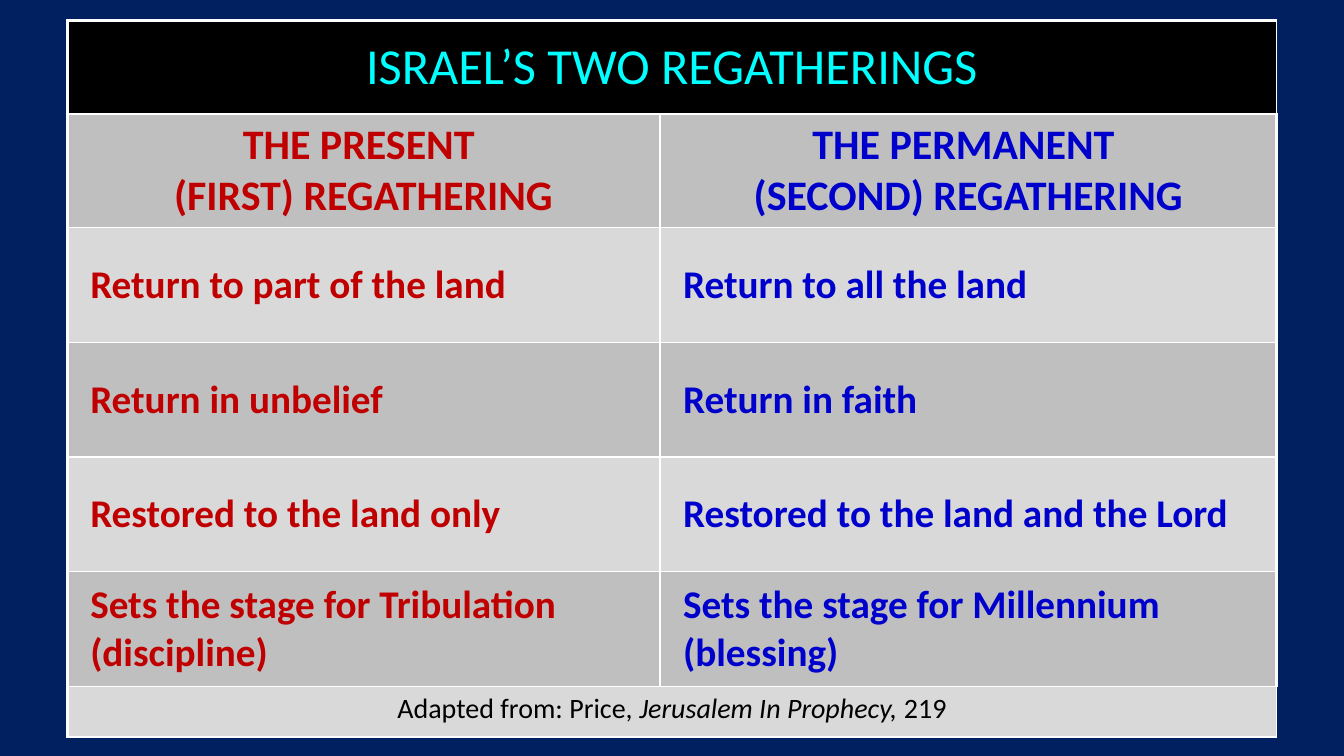
from lxml import etree
from pptx import Presentation
from pptx.dml.color import RGBColor
from pptx.enum import text
from pptx.oxml import ns
from pptx.util import Pt

BACKGROUND, BORDER = "002060", "FFFFFF"
BLACK, DARK, LIGHT = "000000", "BFBFBF", "D9D9D9"
TITLE_COLOR = "00FFFF"
SIDE_COLORS = ("C00000", "0000CC")  # present, permanent

TITLE = "ISRAEL’S TWO REGATHERINGS"
HEADINGS = (
    ("THE PRESENT ", "(FIRST) REGATHERING"),
    ("THE PERMANENT ", "(SECOND) REGATHERING"),
)
CONTRASTS = [
    ("Return to part of the land", "Return to all the land"),
    ("Return in unbelief", "Return in faith"),
    ("Restored to the land only", "Restored to the land and the Lord"),
    ("Sets the stage for Tribulation (discipline)",
     "Sets the stage for Millennium (blessing)"),
]
CITATION = (("Adapted from: Price, ", False),
            ("Jerusalem In Prophecy, ", True),
            ("219", False))

LEFT, TOP = 48, 14.5
COLUMN_WIDTHS = (423.5, 440.5)
ROW_HEIGHTS = (67, 81) + (82,) * len(CONTRASTS) + (36,)
BODY_MARGIN = 16.5
OUTER_LINE, INNER_LINE = 2.25, 1


def rgb(color):
    return RGBColor.from_string(color)


def write(cell, lines, *, size, color, bold=False, centered=True, middle=True):
    """Each line is a paragraph, given as a list of (words, italic)."""
    cell.vertical_anchor = text.MSO_ANCHOR.MIDDLE if middle else text.MSO_ANCHOR.TOP
    frame = cell.text_frame
    for i, line in enumerate(lines):
        paragraph = frame.add_paragraph() if i else frame.paragraphs[0]
        paragraph.alignment = text.PP_ALIGN.CENTER if centered else text.PP_ALIGN.LEFT
        for words, italic in line:
            run = paragraph.add_run()
            run.text = words
            font = run.font
            font.name, font.size = "Calibri", Pt(size)
            font.bold, font.italic = bold, italic
            font.color.rgb = rgb(color)


def add_borders(cell, row, column):
    properties = cell._tc.get_or_add_tcPr()
    outer = {
        "lnL": column == 0,
        "lnR": column == len(COLUMN_WIDTHS) - 1,
        "lnT": row == 0,
        "lnB": row == len(ROW_HEIGHTS) - 1,
    }
    for position, (side, is_outer) in enumerate(outer.items()):
        line = etree.Element(ns.qn(f"a:{side}"))
        line.set("w", str(Pt(OUTER_LINE if is_outer else INNER_LINE)))
        fill = etree.SubElement(line, ns.qn("a:solidFill"))
        etree.SubElement(fill, ns.qn("a:srgbClr")).set("val", BORDER)
        properties.insert(position, line)


def main():
    deck = Presentation()
    deck.slide_width, deck.slide_height = Pt(960), Pt(540)
    slide = deck.slides.add_slide(deck.slide_layouts[6])
    slide.background.fill.solid()
    slide.background.fill.fore_color.rgb = rgb(BACKGROUND)

    table = slide.shapes.add_table(
        len(ROW_HEIGHTS), len(COLUMN_WIDTHS), Pt(LEFT), Pt(TOP),
        Pt(sum(COLUMN_WIDTHS)), Pt(sum(ROW_HEIGHTS))).table
    table.first_row = table.horz_banding = False
    for column, width in zip(table.columns, COLUMN_WIDTHS):
        column.width = Pt(width)
    last = len(ROW_HEIGHTS) - 1
    for r, height in enumerate(ROW_HEIGHTS):
        table.rows[r].height = Pt(height)
        for c in range(len(COLUMN_WIDTHS)):
            cell = table.cell(r, c)
            cell.fill.solid()
            shade = BLACK if r == 0 else DARK if r % 2 else LIGHT
            cell.fill.fore_color.rgb = rgb(shade)
            add_borders(cell, r, c)
    for r in (0, last):
        table.cell(r, 0).merge(table.cell(r, 1))

    write(table.cell(0, 0), [[(TITLE, False)]], size=36, color=TITLE_COLOR)
    for c, color in enumerate(SIDE_COLORS):
        write(table.cell(1, c), [[(line, False)] for line in HEADINGS[c]],
              size=30, color=color, bold=True, middle=False)
        for r, contrast in enumerate(CONTRASTS, start=2):
            cell = table.cell(r, c)
            cell.margin_left = Pt(BODY_MARGIN)
            write(cell, [[(contrast[c], False)]],
                  size=28, color=color, bold=True, centered=False)
    write(table.cell(last, 0), [CITATION], size=20, color=BLACK, middle=False)

    deck.save("out.pptx")


if __name__ == "__main__":
    main()
